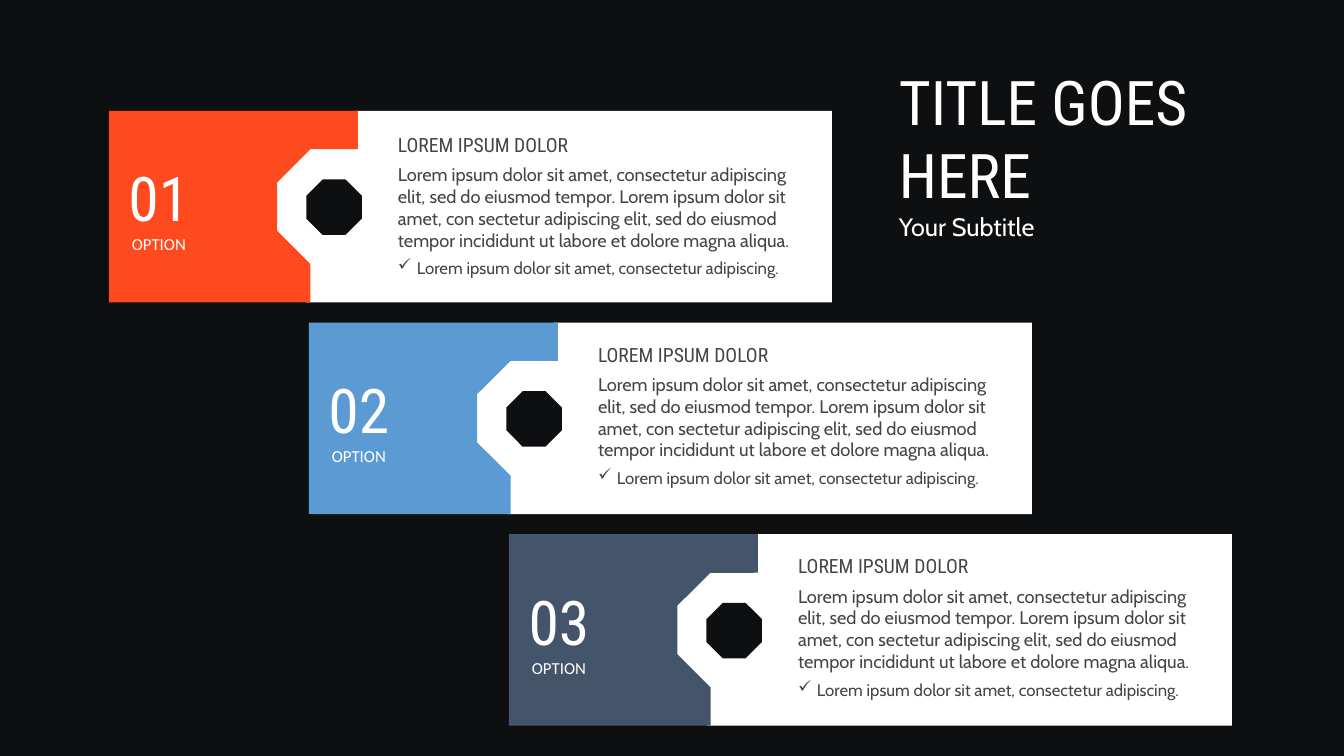
from dataclasses import dataclass

from lxml import etree
from pptx import Presentation
from pptx.dml.color import RGBColor
from pptx.enum.shapes import MSO_SHAPE
from pptx.enum.text import PP_ALIGN
from pptx.oxml.ns import qn
from pptx.util import Pt

OCTAGON = MSO_SHAPE.OCTAGON
LEFT, CENTER = PP_ALIGN.LEFT, PP_ALIGN.CENTER

BLACK = RGBColor(0x0E, 0x0F, 0x11)
WHITE = RGBColor(0xFF, 0xFF, 0xFF)
GRAY = RGBColor(0x45, 0x45, 0x45)
ORANGE = RGBColor(0xFE, 0x4A, 0x1E)
BLUE = RGBColor(0x5C, 0x9A, 0xD3)
SLATE = RGBColor(0x44, 0x54, 0x6B)

HEAD_FONT, BODY_FONT, LABEL_FONT = "Roboto Condensed", "Cabin", "Calibri"

FIRST_X, FIRST_Y = 77.8, 79.2
STEP_X, STEP_Y = 142.9, 151.2

# Outlines relative to the top left corner of a card
PANEL = [(175, 0), (516.4, 0), (516.4, 136.8), (141.1, 136.8), (141.1, 109.4),
         (143.3, 109.4), (119.5, 85.7), (119.5, 51.1), (143.3, 27.4), (175, 27.4)]
TAB = [(0, 0), (177.8, 0), (177.8, 27.4), (144, 27.4), (120.2, 51.1),
       (120.2, 85.7), (144, 109.4), (144, 136.8), (0, 136.8)]

HEADING = "LOREM IPSUM DOLOR"
BODY = ("Lorem ipsum dolor sit amet, consectetur adipiscing elit, sed do eiusmod tempor. "
        "Lorem ipsum dolor sit amet, con sectetur adipiscing elit, sed do eiusmod tempor "
        "incididunt ut labore et dolore magna aliqua.")
CHECKED = "Lorem ipsum dolor sit amet, consectetur adipiscing."


@dataclass
class Option:
    number: str
    color: RGBColor
    text_top: float


@dataclass
class Line:
    text: str
    size: float
    font: str
    color: RGBColor
    align: PP_ALIGN = LEFT
    before: float = 0
    bullet: str = ""


OPTIONS = [Option("01", ORANGE, 12.2), Option("02", BLUE, 10.8), Option("03", SLATE, 10.8)]


def paint(sp, color: RGBColor) -> None:
    sp.shadow.inherit = False
    sp.fill.solid()
    sp.fill.fore_color.rgb = color
    sp.line.fill.background()


def add_outline(s, x: float, y: float, points: list, color: RGBColor) -> None:
    corners = [(Pt(x + dx), Pt(y + dy)) for dx, dy in points]
    builder = s.shapes.build_freeform(*corners[0])
    builder.add_line_segments(corners[1:], close=True)
    paint(builder.convert_to_shape(), color)


def add_bullet(p, char: str, indent: float) -> None:
    pPr = p._p.get_or_add_pPr()
    pPr.set("marL", str(Pt(indent)))
    pPr.set("indent", str(-Pt(indent)))
    etree.SubElement(pPr, qn("a:buChar")).set("char", char)


def add_text(s, x: float, y: float, w: float, h: float, lines: list[Line]) -> None:
    tf = s.shapes.add_textbox(Pt(x), Pt(y), Pt(w), Pt(h)).text_frame
    tf.word_wrap = True
    for i, line in enumerate(lines):
        p = tf.add_paragraph() if i else tf.paragraphs[0]
        p.text = line.text
        p.alignment = line.align
        p.space_before = Pt(line.before)
        if line.bullet:
            add_bullet(p, line.bullet, 13.5)
        font = p.runs[0].font
        font.size = Pt(line.size)
        font.name = line.font
        font.color.rgb = line.color


def add_option(s, x: float, y: float, option: Option) -> None:
    add_outline(s, x, y, PANEL, WHITE)
    add_text(s, x + 199.4, y + option.text_top, 309.6, 115.2, [
        Line(HEADING, 14, HEAD_FONT, GRAY),
        Line(BODY, 13, BODY_FONT, GRAY, before=5),
        Line(CHECKED, 12, BODY_FONT, GRAY, before=5, bullet="✓"),
    ])
    add_outline(s, x, y, TAB, option.color)
    add_text(s, x + 2.9, y + 31.7, 65.5, 74.9, [
        Line(option.number, 44, HEAD_FONT, WHITE, CENTER),
        Line("OPTION", 12, LABEL_FONT, WHITE, CENTER),
    ])
    sp = s.shapes.add_shape(OCTAGON, Pt(x + 141), Pt(y + 49), Pt(39.6), Pt(39.6))
    paint(sp, BLACK)


def main() -> None:
    prs = Presentation()
    prs.slide_width, prs.slide_height = Pt(960), Pt(540)
    s = prs.slides.add_slide(prs.slide_layouts[6])
    s.background.fill.solid()
    s.background.fill.fore_color.rgb = BLACK
    for i, option in enumerate(OPTIONS):
        add_option(s, FIRST_X + i * STEP_X, FIRST_Y + i * STEP_Y, option)
    add_text(s, 635, 41.8, 247, 135.4, [
        Line("TITLE GOES HERE", 44, HEAD_FONT, WHITE),
        Line("Your Subtitle", 18, BODY_FONT, WHITE),
    ])
    prs.save("out.pptx")


if __name__ == "__main__":
    main()
